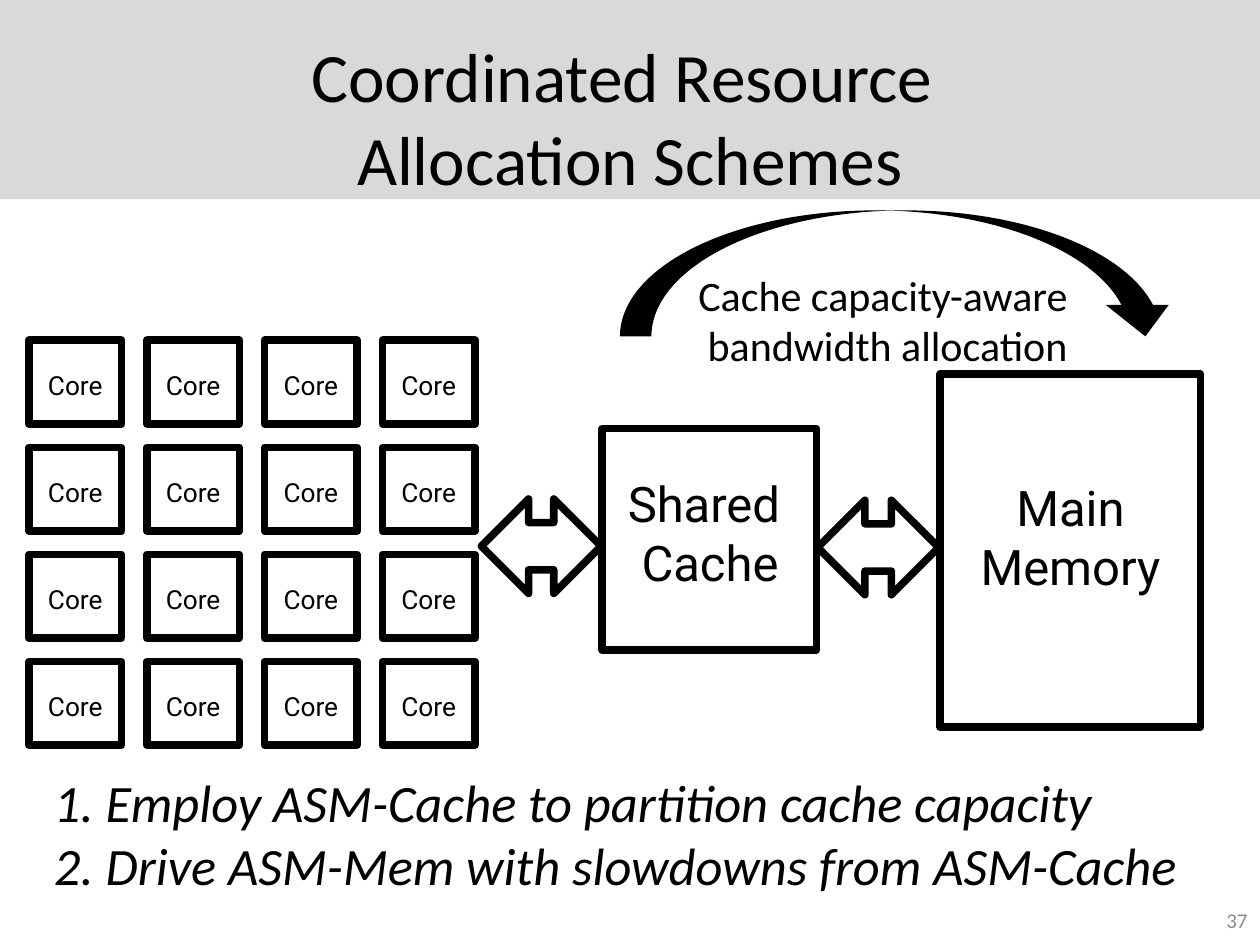
from itertools import product

from pptx import Presentation
from pptx.dml.color import RGBColor
from pptx.enum.shapes import MSO_SHAPE
from pptx.enum.text import MSO_ANCHOR, PP_ALIGN
from pptx.util import Inches, Pt

RECTANGLE = MSO_SHAPE.RECTANGLE
DOUBLE_ARROW = MSO_SHAPE.LEFT_RIGHT_ARROW
CURVED_ARROW = MSO_SHAPE.CURVED_DOWN_ARROW
TOP, MIDDLE = MSO_ANCHOR.TOP, MSO_ANCHOR.MIDDLE
LEFT, CENTER, RIGHT = PP_ALIGN.LEFT, PP_ALIGN.CENTER, PP_ALIGN.RIGHT

THEME = {
    "ink": RGBColor.from_string("000000"),
    "band": RGBColor.from_string("D9D9D9"),
    "muted": RGBColor.from_string("8C8C8C"),
    "body_font": "Calibri",
    "diagram_font": "Roboto",
    "title": Pt(39.6),
    "point": Pt(30),
    "unit": Pt(28),
    "caption": Pt(24),
    "core": Pt(15),
    "number": Pt(12),
    "outline": Pt(4.32),
}

deck = Presentation()
deck.slide_width, deck.slide_height = Inches(10), Inches(7.5)
page = deck.slides.add_slide(deck.slide_layouts[6])
COLUMN = deck.slide_width / 100
ROW = deck.slide_height / 75


def add_shape(kind, left, top, width, height, fill=None):
    shape = page.shapes.add_shape(
        kind, int(left * COLUMN), int(top * ROW), int(width * COLUMN), int(height * ROW)
    )
    shape.shadow.inherit = False
    if fill is None:
        shape.fill.background()
        shape.line.color.rgb = THEME["ink"]
        shape.line.width = THEME["outline"]
    else:
        shape.fill.solid()
        shape.fill.fore_color.rgb = fill
        shape.line.fill.background()


def add_text(lines, left, top, width, height, size, font="body_font", color="ink",
             align=CENTER, anchor=TOP, italic=False):
    box = page.shapes.add_textbox(
        int(left * COLUMN), int(top * ROW), int(width * COLUMN), int(height * ROW)
    )
    frame = box.text_frame
    frame.word_wrap = True
    frame.vertical_anchor = anchor
    for index, line in enumerate(lines):
        para = frame.add_paragraph() if index else frame.paragraphs[0]
        para.alignment = align
        span = para.add_run()
        span.text = line
        span.font.name = THEME[font]
        span.font.size = THEME[size]
        span.font.color.rgb = THEME[color]
        span.font.italic = italic


add_shape(RECTANGLE, 0, 0, 100, 15.8, THEME["band"])
add_text(["Coordinated Resource ", "Allocation Schemes"], 5, 3, 90, 12.5, "title",
         anchor=MIDDLE)
add_text(["37"], 76.7, 71, 23.3, 4, "number", color="muted", align=RIGHT, anchor=MIDDLE)

for row, column in product(range(4), range(4)):
    left, top = 2.3 + 9.35 * column, 27 + 8.5 * row
    add_shape(RECTANGLE, left, top, 7.35, 6.65)
    add_text(["Core"], left, top + 1.8, 7.35, 3.5, "core", "diagram_font")

add_shape(RECTANGLE, 74.6, 29.7, 20.7, 28)
add_text(["Main Memory"], 74.9, 37.4, 20.1, 10.4, "unit", "diagram_font")
add_shape(DOUBLE_ARROW, 64.9, 39.7, 9.6, 7.5)

add_shape(RECTANGLE, 47.8, 34, 17, 17.6)
add_text(["Shared ", "Cache"], 48.1, 37.1, 16.5, 10.4, "unit", "diagram_font")
add_shape(DOUBLE_ARROW, 38.2, 39.6, 9.5, 7.5)

add_shape(CURVED_ARROW, 49.2, 16.7, 44.2, 10, THEME["ink"])
add_text(["Cache capacity-aware ", "bandwidth allocation"], 49.2, 20.9, 42.5, 9.1, "caption")

add_text(
    ["1. Employ ASM-Cache to partition cache capacity",
     "2. Drive ASM-Mem with slowdowns from ASM-Cache"],
    3.3, 60.6, 93.3, 11.1, "point", align=LEFT, italic=True,
)

deck.save("out.pptx")
